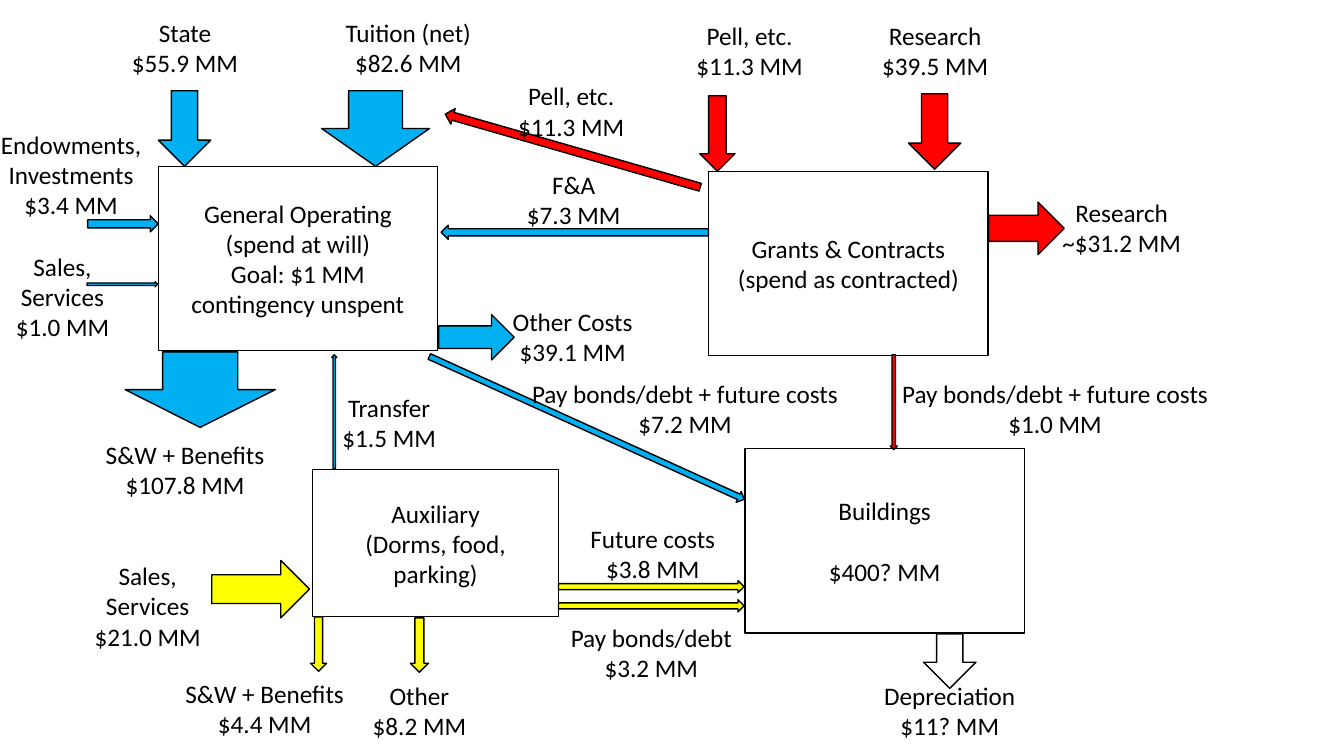
from pptx import Presentation
from pptx.dml.color import RGBColor
from pptx.enum.shapes import MSO_SHAPE
from pptx.enum.text import MSO_ANCHOR, MSO_AUTO_SIZE, PP_ALIGN
from pptx.util import Pt

EMU_PER_PX = 9144
BLACK = "000000"
OPERATING = "00B0F0"
GRANTS = "FF0000"
AUXILIARY = "FFFF00"
LABEL_PADDING = 11
LABEL_LINE = 30
DOWN, LEFT, UP, RIGHT = 0, 90, 180, 270

FUNDS = [
    (157, 165, 277, 183, ["General Operating", "(spend at will)", "Goal: $1 MM", "contingency unspent"], 0),
    (703, 170, 277, 183, ["Grants & Contracts", "(spend as contracted)"], 0),
    (739, 445, 277, 183, ["Buildings", "$400? MM"], 22),
    (310, 466, 244, 146, ["Auxiliary", "(Dorms, food, parking)"], 0),
]

FLOWS = [
    (157, 90, 52, 75, DOWN, OPERATING),
    (319, 90, 107, 75, DOWN, OPERATING),
    (124, 349, 149, 75, DOWN, OPERATING),
    (114, 187, 16, 70, RIGHT, OPERATING),
    (119, 247, 5, 70, RIGHT, OPERATING),
    (450, 297, 45, 75, RIGHT, OPERATING),
    (563, 98, 14, 265, LEFT, OPERATING),
    (329, 352, 5, 113, UP, OPERATING),
    (576, 253, 12, 343, 294.4, OPERATING),
    (694, 95, 35, 75, DOWN, GRANTS),
    (901, 93, 52, 75, DOWN, GRANTS),
    (992, 189, 52, 75, RIGHT, GRANTS),
    (560, 18, 16, 263, 106, GRANTS),
    (883, 352, 7, 94, DOWN, GRANTS),
    (230, 536, 57, 97, RIGHT, AUXILIARY),
    (308, 612, 16, 54, DOWN, AUXILIARY),
    (407, 613, 18, 54, DOWN, AUXILIARY),
    (640, 490, 12, 184, RIGHT, AUXILIARY),
    (640, 509, 12, 184, RIGHT, AUXILIARY),
    (916, 629, 52, 54, DOWN, None),
]

LABELS = [
    (120, 12, 127, ["State", "$55.9 MM"]),
    (332, 12, 146, ["Tuition (net)", "$82.6 MM"]),
    (680, 15, 127, ["Pell, etc.", "$11.3 MM"]),
    (864, 15, 127, ["Research", "$39.5 MM"]),
    (503, 75, 127, ["Pell, etc.", "$11.3 MM"]),
    (512, 163, 114, ["F&A", "$7.3 MM"]),
    (1043, 191, 139, ["Research", "~$31.2 MM"]),
    (-13, 123, 167, ["Endowments,", "Investments", "$3.4 MM"]),
    (5, 244, 114, ["Sales,", "Services", "$1.0 MM"]),
    (498, 299, 140, ["Other Costs", "$39.1 MM"]),
    (94, 431, 179, ["S&W + Benefits", "$107.8 MM"]),
    (329, 384, 114, ["Transfer", "$1.5 MM"]),
    (516, 370, 327, ["Pay bonds/debt + future costs", "$7.2 MM"]),
    (883, 370, 327, ["Pay bonds/debt + future costs", "$1.0 MM"]),
    (83, 551, 127, ["Sales,", "Services", "$21.0 MM"]),
    (575, 514, 145, ["Future costs", "$3.8 MM"]),
    (555, 612, 182, ["Pay bonds/debt", "$3.2 MM"]),
    (173, 668, 179, ["S&W + Benefits", "$4.4 MM"]),
    (359, 670, 114, ["Other", "$8.2 MM"]),
    (866, 670, 152, ["Depreciation", "$11? MM"]),
]


def px(length):
    return length * EMU_PER_PX


def color(value):
    return RGBColor.from_string(value)


def write_lines(text_frame, lines, gap=0):
    for index, line in enumerate(lines):
        paragraph = text_frame.paragraphs[0] if index == 0 else text_frame.add_paragraph()
        paragraph.alignment = PP_ALIGN.CENTER
        if index and gap:
            paragraph.space_before = Pt(gap)
        run = paragraph.add_run()
        run.text = line
        run.font.size = Pt(18)
        run.font.name = "Calibri"
        run.font.color.rgb = color(BLACK)


def add_outlined_shape(slide, kind, left, top, width, height, fill=None):
    shape = slide.shapes.add_shape(kind, px(left), px(top), px(width), px(height))
    shape.shadow.inherit = False
    if fill:
        shape.fill.solid()
        shape.fill.fore_color.rgb = color(fill)
    else:
        shape.fill.background()
    shape.line.color.rgb = color(BLACK)
    shape.line.width = Pt(1)
    return shape


def add_fund(slide, left, top, width, height, lines, gap):
    shape = add_outlined_shape(slide, MSO_SHAPE.RECTANGLE, left, top, width, height)
    shape.text_frame.word_wrap = True
    shape.text_frame.vertical_anchor = MSO_ANCHOR.MIDDLE
    write_lines(shape.text_frame, lines, gap)


def add_flow(slide, left, top, width, height, rotation, fill):
    shape = add_outlined_shape(slide, MSO_SHAPE.DOWN_ARROW, left, top, width, height, fill)
    shape.rotation = rotation


def add_label(slide, left, top, width, lines):
    height = LABEL_PADDING + LABEL_LINE * len(lines)
    label = slide.shapes.add_textbox(px(left), px(top), px(width), px(height))
    label.text_frame.word_wrap = False
    label.text_frame.auto_size = MSO_AUTO_SIZE.SHAPE_TO_FIT_TEXT
    write_lines(label.text_frame, lines)


def main():
    presentation = Presentation()
    presentation.slide_width = px(1333)
    presentation.slide_height = px(750)
    slide = presentation.slides.add_slide(presentation.slide_layouts[6])
    for fund in FUNDS:
        add_fund(slide, *fund)
    for flow in FLOWS:
        add_flow(slide, *flow)
    for label in LABELS:
        add_label(slide, *label)
    presentation.save("out.pptx")


if __name__ == "__main__":
    main()
